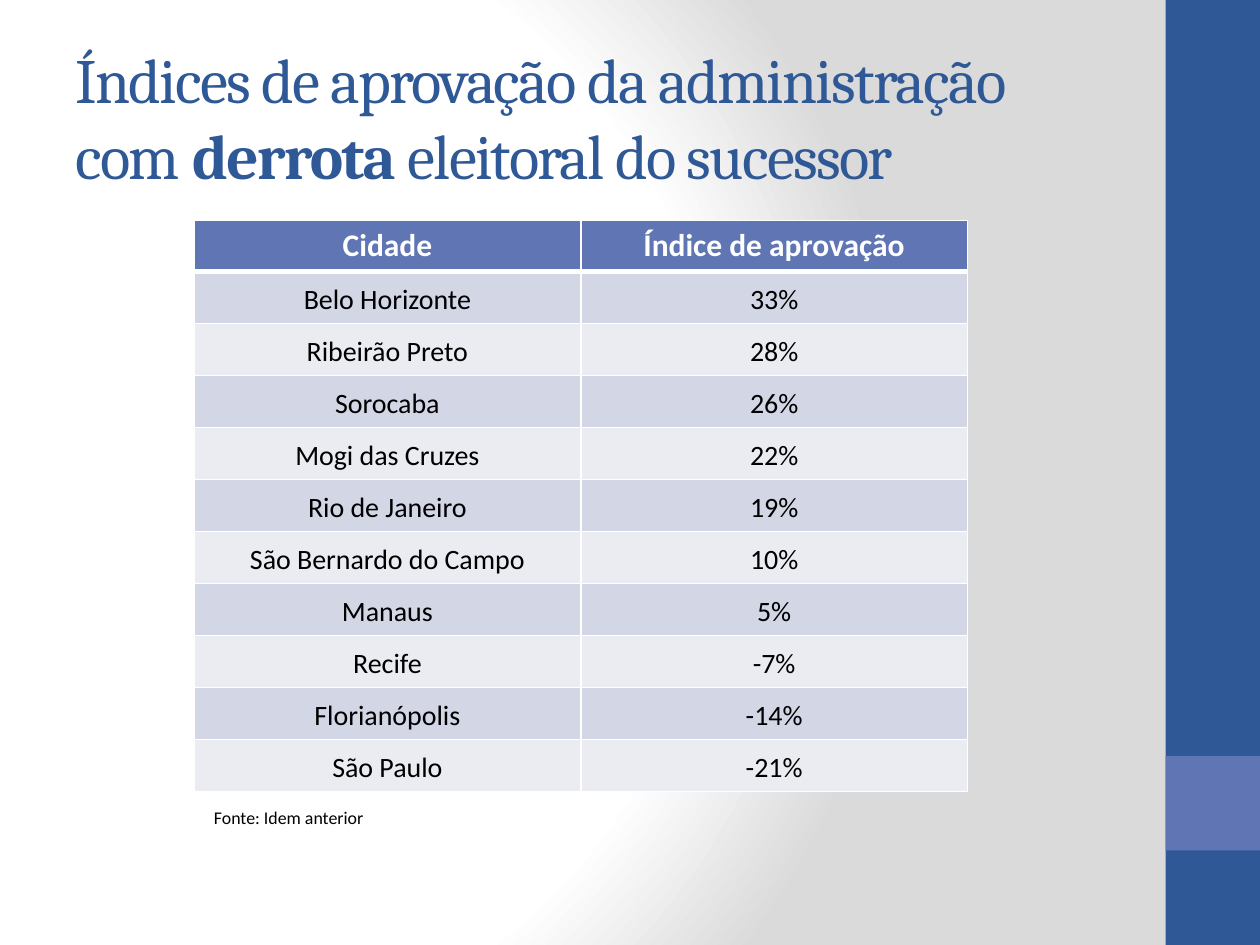
from lxml.etree import SubElement
from pptx import Presentation
from pptx.dml.color import RGBColor
from pptx.enum.shapes import MSO_SHAPE as Shape
from pptx.enum.text import MSO_ANCHOR as Anchor, PP_ALIGN as Align
from pptx.oxml import parse_xml
from pptx.oxml.ns import nsdecls, qn
from pptx.util import Pt

BLUE = RGBColor(0x2F, 0x58, 0x97)
PERIWINKLE = RGBColor(0x60, 0x76, 0xB4)
BAND_DARK = RGBColor(0xD2, 0xD6, 0xE5)
BAND_LIGHT = RGBColor(0xEA, 0xEC, 0xF2)
WHITE = RGBColor(0xFF, 0xFF, 0xFF)
GREY = RGBColor(0xDA, 0xDA, 0xDA)
BLACK = RGBColor(0, 0, 0)

ROWS = [
    ("Cidade", "Índice de aprovação"),
    ("Belo Horizonte", "33%"),
    ("Ribeirão Preto", "28%"),
    ("Sorocaba", "26%"),
    ("Mogi das Cruzes", "22%"),
    ("Rio de Janeiro", "19%"),
    ("São Bernardo do Campo", "10%"),
    ("Manaus", "5%"),
    ("Recife", "-7%"),
    ("Florianópolis", "-14%"),
    ("São Paulo", "-21%"),
]
COLUMN_WIDTH, ROW_HEIGHT = 221, 29.25


def set_font(font, name, size, color, bold=False):
    font.name, font.size, font.bold = name, Pt(size), bold
    font.color.rgb = color


def paint_background(slide):
    """Radial gradient: white out to 75 %, then grey."""
    slide.background.fill.gradient()
    gradient = slide.element.find(".//" + qn("a:gradFill"))
    stops = "".join(
        f'<a:gs pos="{position}"><a:srgbClr val="{color}"/></a:gs>'
        for position, color in ((0, WHITE), (75000, WHITE), (100000, GREY)))
    gradient.getparent().replace(gradient, parse_xml(
        f'<a:gradFill {nsdecls("a")} rotWithShape="1"><a:gsLst>{stops}</a:gsLst>'
        '<a:path path="circle"><a:fillToRect l="20000" t="50000" r="100000"'
        ' b="50000"/></a:path></a:gradFill>'))


def add_band(slide, top, height, color):
    band = slide.shapes.add_shape(
        Shape.RECTANGLE, Pt(666), Pt(top), Pt(54), Pt(height))
    band.shadow.inherit = False
    band.fill.solid()
    band.fill.fore_color.rgb = color
    band.line.fill.background()


def fill_title(title):
    title.left, title.top, title.width, title.height = (
        Pt(36), Pt(21.6), Pt(600), Pt(90))
    frame = title.text_frame
    frame.vertical_anchor = Anchor.MIDDLE
    para = frame.paragraphs[0]
    para.alignment = Align.LEFT
    set_font(para.font, "Cambria", 36, BLUE)
    for text, bold in (("Índices de aprovação da administração com ", False),
                       ("derrota", True),
                       (" eleitoral do sucessor", False)):
        span = para.add_run()
        span.text = text
        span.font.bold = bold
        # Tighten letter spacing by one point
        span.font._element.set("spc", "-100")


def set_borders(cell, top, bottom):
    properties = cell._tc.get_or_add_tcPr()
    for side, width in (("L", 1), ("R", 1), ("T", top), ("B", bottom)):
        line = SubElement(properties, qn(f"a:ln{side}"), w=str(Pt(width)))
        fill = SubElement(line, qn("a:solidFill"))
        SubElement(fill, qn("a:srgbClr"), val=str(WHITE))


def fill_cell(cell, text, row):
    header = row == 0
    # The rule between header and body is thicker
    set_borders(cell, 3 if row == 1 else 1, 3 if header else 1)
    cell.fill.solid()
    cell.fill.fore_color.rgb = (
        PERIWINKLE if header else BAND_DARK if row % 2 else BAND_LIGHT)
    cell.text = text
    para = cell.text_frame.paragraphs[0]
    para.alignment = Align.CENTER
    if header:
        set_font(para.font, "Calibri", 18, WHITE, bold=True)
    else:
        para.line_spacing = 1.15
        set_font(para.font, "Calibri", 16, BLACK)


def add_approval_table(slide):
    table = slide.shapes.add_table(
        len(ROWS), 2, Pt(110.9), Pt(126),
        Pt(2 * COLUMN_WIDTH), Pt(len(ROWS) * ROW_HEIGHT)).table
    for column in table.columns:
        column.width = Pt(COLUMN_WIDTH)
    for row, texts in enumerate(ROWS):
        table.rows[row].height = Pt(ROW_HEIGHT)
        for column, text in enumerate(texts):
            fill_cell(table.cell(row, column), text, row)


def add_source_note(slide):
    box = slide.shapes.add_textbox(Pt(106.6), Pt(457.2), Pt(448), Pt(17.3))
    box.text_frame.word_wrap = True
    para = box.text_frame.paragraphs[0]
    para.text = "Fonte: Idem anterior"
    para.space_before = Pt(2)
    set_font(para.font, "Calibri", 10.2, BLACK)
    para._p.get_or_add_pPr().set("marL", str(Pt(8.6)))


def main():
    deck = Presentation()
    deck.slide_width, deck.slide_height = Pt(720), Pt(540)
    slide = deck.slides.add_slide(deck.slide_layouts[5])

    # Background and side bands
    paint_background(slide)
    add_band(slide, 0, 540, BLUE)
    add_band(slide, 432, 54, PERIWINKLE)

    # Content
    fill_title(slide.shapes.title)
    add_approval_table(slide)
    add_source_note(slide)
    deck.save("out.pptx")


if __name__ == "__main__":
    main()
